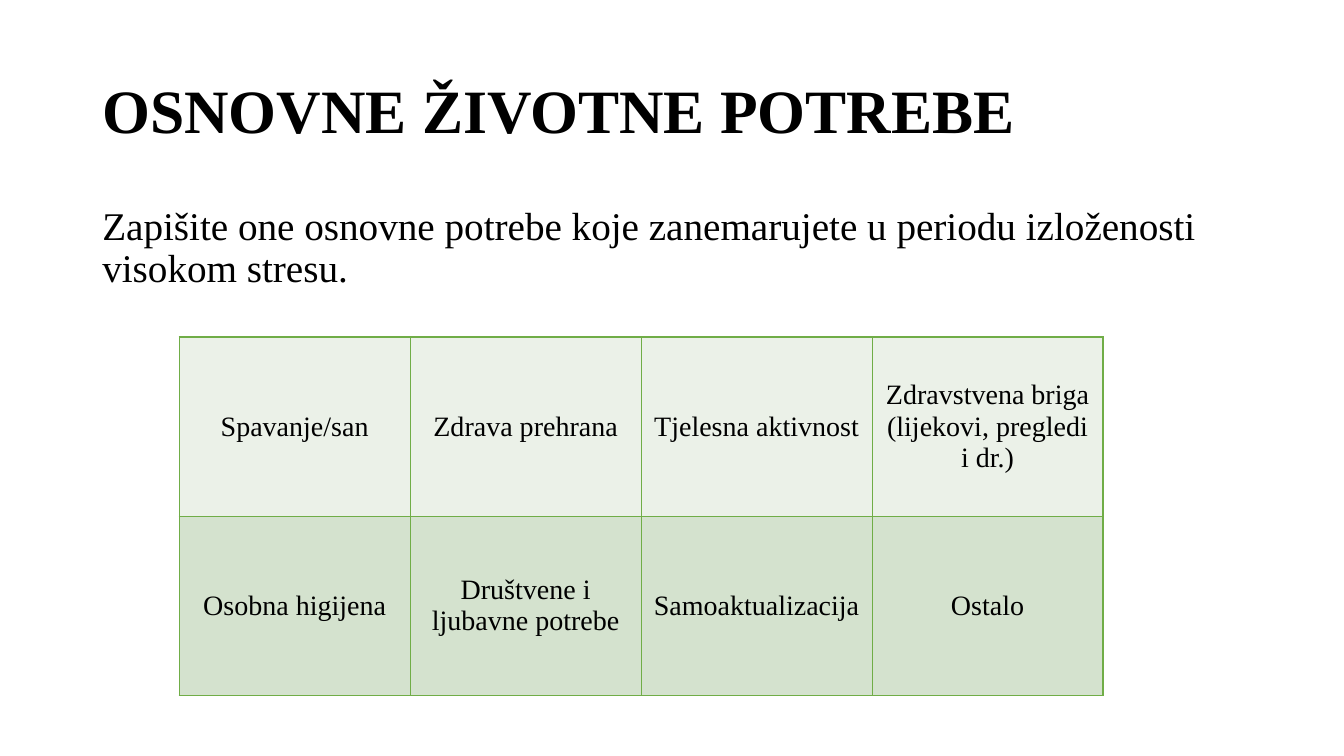
from dataclasses import dataclass

from lxml import etree
from pptx import Presentation
from pptx import util as u
from pptx.dml import color
from pptx.enum import text
from pptx.oxml import ns


@dataclass(frozen=True)
class Theme:
    font: str = "Times New Roman"
    ink: str = "000000"
    border: str = "70AD47"
    row_fills: tuple[str, ...] = ("EBF1E8", "D4E2CE")
    title_size: float = 44
    body_size: float = 28
    cell_size: float = 20
    border_width: float = 1


@dataclass(frozen=True)
class TextBlock:
    words: str
    top: float
    height: float
    size: float
    bold: bool
    anchor: text.MSO_ANCHOR


THEME = Theme()
TEXT_LEFT, TEXT_WIDTH = 66, 828
TABLE_LEFT, TABLE_TOP = 128, 240.7
COL_WIDTH, ROW_HEIGHT = 165, 128

BLOCKS = (
    TextBlock("OSNOVNE ŽIVOTNE POTREBE", 28.75, 104.4,
              THEME.title_size, True, text.MSO_ANCHOR.MIDDLE),
    TextBlock("Zapišite one osnovne potrebe koje zanemarujete u periodu "
              "izloženosti visokom stresu.", 143.75, 71.3,
              THEME.body_size, False, text.MSO_ANCHOR.TOP),
)
NEEDS = (
    ("Spavanje/san", "Zdrava prehrana", "Tjelesna aktivnost",
     "Zdravstvena briga (lijekovi, pregledi i dr.)"),
    ("Osobna higijena", "Društvene i ljubavne potrebe",
     "Samoaktualizacija", "Ostalo"),
)


def add_run(p, words: str, size: float, bold: bool = False) -> None:
    r = p.add_run()
    r.text = words
    r.font.name = THEME.font
    r.font.size = u.Pt(size)
    r.font.bold = bold
    r.font.color.rgb = color.RGBColor.from_string(THEME.ink)


def add_block(s, block: TextBlock) -> None:
    sp = s.shapes.add_textbox(u.Pt(TEXT_LEFT), u.Pt(block.top),
                              u.Pt(TEXT_WIDTH), u.Pt(block.height))
    tf = sp.text_frame
    tf.word_wrap = True
    tf.vertical_anchor = block.anchor
    p = tf.paragraphs[0]
    p.line_spacing = 0.9
    add_run(p, block.words, block.size, block.bold)


def add_borders(cell) -> None:
    # Border lines must precede the fill in the cell properties
    props = cell._tc.get_or_add_tcPr()
    for i, side in enumerate(("a:lnL", "a:lnR", "a:lnT", "a:lnB")):
        ln = etree.Element(ns.qn(side), w=str(u.Pt(THEME.border_width)))
        fill = etree.SubElement(ln, ns.qn("a:solidFill"))
        etree.SubElement(fill, ns.qn("a:srgbClr"), val=THEME.border)
        props.insert(i, ln)


def add_needs_table(s, needs: tuple[tuple[str, ...], ...]) -> None:
    rows, cols = len(needs), len(needs[0])
    table = s.shapes.add_table(rows, cols, u.Pt(TABLE_LEFT), u.Pt(TABLE_TOP),
                               u.Pt(cols * COL_WIDTH),
                               u.Pt(rows * ROW_HEIGHT)).table
    table.first_row = False
    table.horz_banding = False
    for i, (row, fill) in enumerate(zip(needs, THEME.row_fills)):
        for j, words in enumerate(row):
            cell = table.cell(i, j)
            cell.vertical_anchor = text.MSO_ANCHOR.MIDDLE
            cell.fill.solid()
            cell.fill.fore_color.rgb = color.RGBColor.from_string(fill)
            add_borders(cell)
            p = cell.text_frame.paragraphs[0]
            p.alignment = text.PP_ALIGN.CENTER
            add_run(p, words, THEME.cell_size)


def main() -> None:
    prs = Presentation()
    prs.slide_width, prs.slide_height = u.Pt(960), u.Pt(540)
    s = prs.slides.add_slide(prs.slide_layouts[6])

    # Title and instruction
    for block in BLOCKS:
        add_block(s, block)

    # Grid of basic needs
    add_needs_table(s, NEEDS)

    prs.save("out.pptx")


if __name__ == "__main__":
    main()
